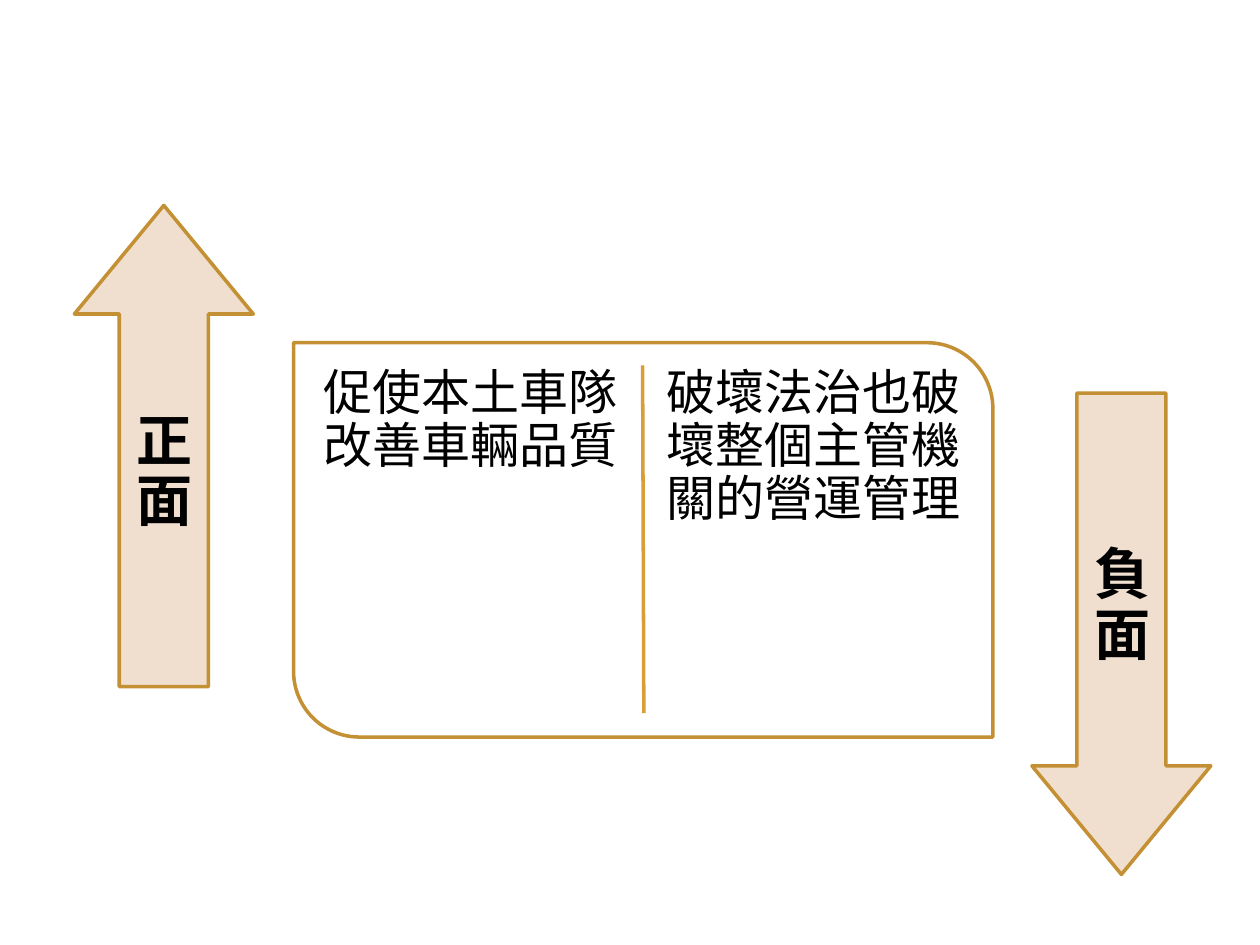
from lxml.etree import SubElement
from pptx import Presentation
from pptx.dml.color import RGBColor
from pptx.enum.shapes import MSO_CONNECTOR, MSO_SHAPE
from pptx.enum.text import MSO_ANCHOR, PP_ALIGN
from pptx.oxml.ns import qn
from pptx.util import Inches, Pt


def color(value):
    """Turn a hex string into a colour."""
    return RGBColor.from_string(value)


class SlideBuilder:
    """Holds the style and the current slide."""

    font_name = "Noto Sans CJK SC"
    ink = "000000"
    outline = "C49034"
    divider = "D89F39"
    paper = "FFFFFF"
    arrow_fill = "F0DFCE"
    line_width = Pt(2)

    def __init__(self, slide):
        self.slide = slide

    def shape(self, kind, place, fill, adjustments, rotation=0):
        """Add an outlined preset shape."""
        shape = self.slide.shapes.add_shape(kind, *map(Inches, place))
        shape.shadow.inherit = False
        shape.rotation = rotation
        for index, value in enumerate(adjustments):
            shape.adjustments[index] = value
        shape.fill.solid()
        shape.fill.fore_color.rgb = color(fill)
        shape.line.color.rgb = color(self.outline)
        shape.line.width = self.line_width

    def line(self, start, end):
        """Add a straight divider."""
        line = self.slide.shapes.add_connector(
            MSO_CONNECTOR.STRAIGHT, *map(Inches, start + end))
        line.line.color.rgb = color(self.divider)
        line.line.width = self.line_width
        SubElement(line._element.spPr, qn("a:effectLst"))

    def text(self, text, place, inset, font, align=PP_ALIGN.LEFT,
             anchor=MSO_ANCHOR.TOP, rotation=0, direction="horz"):
        """Add a wrapped text box."""
        box = self.slide.shapes.add_textbox(*map(Inches, place))
        box.rotation = rotation
        frame = box.text_frame
        margins = dict.fromkeys(
            ("margin_left", "margin_top", "margin_right", "margin_bottom"),
            Inches(inset))
        for name, value in {"word_wrap": True, "vertical_anchor": anchor, **margins}.items():
            setattr(frame, name, value)
        frame._txBody.bodyPr.set("vert", direction)
        para = frame.paragraphs[0]
        para.alignment = align
        para.line_spacing = 0.9
        span = para.add_run()
        span.text = text
        for name, value in {"name": self.font_name, **font}.items():
            setattr(span.font, name, value)
        span.font.color.rgb = color(self.ink)
        SubElement(span._r.get_or_add_rPr(), qn("a:ea"), typeface=self.font_name)

    def arrow(self, label, arrow_corner, label_corner, rotation, direction):
        """Add a turned block arrow with an upright label."""
        self.shape(MSO_SHAPE.RIGHT_ARROW, (*arrow_corner, 3.82, 1.42),
                   self.arrow_fill, (0.498, 0.607), rotation)
        self.text(label, (*label_corner, 3.39, 0.71), 0.13,
                  {"size": Pt(32), "bold": True}, PP_ALIGN.CENTER,
                  MSO_ANCHOR.MIDDLE, rotation, direction)


def main():
    """Build and save the slide."""
    deck = Presentation()
    deck.slide_width, deck.slide_height = Inches(10), Inches(7.5)
    page = SlideBuilder(deck.slides.add_slide(deck.slide_layouts[6]))

    page.shape(MSO_SHAPE.ROUND_2_DIAG_RECTANGLE, (2.33, 2.72, 5.55, 3.13),
               page.paper, (0, 0.167))
    page.line((5.1, 2.9), (5.11, 5.66))
    for left, text in ((2.45, "促使本土車隊改善車輛品質"),
                       (5.17, "破壞法治也破壞整個主管機關的營運管理")):
        page.text(text, (left, 2.8, 2.82, 2.97), 0.12, {"size": Pt(28)})

    page.arrow("正面", (-0.61, 2.83), (-0.39, 3.4), 270, "vert")
    page.arrow("負面", (6.99, 4.32), (7.21, 4.46), 90, "vert270")
    deck.save("out.pptx")


if __name__ == "__main__":
    main()
